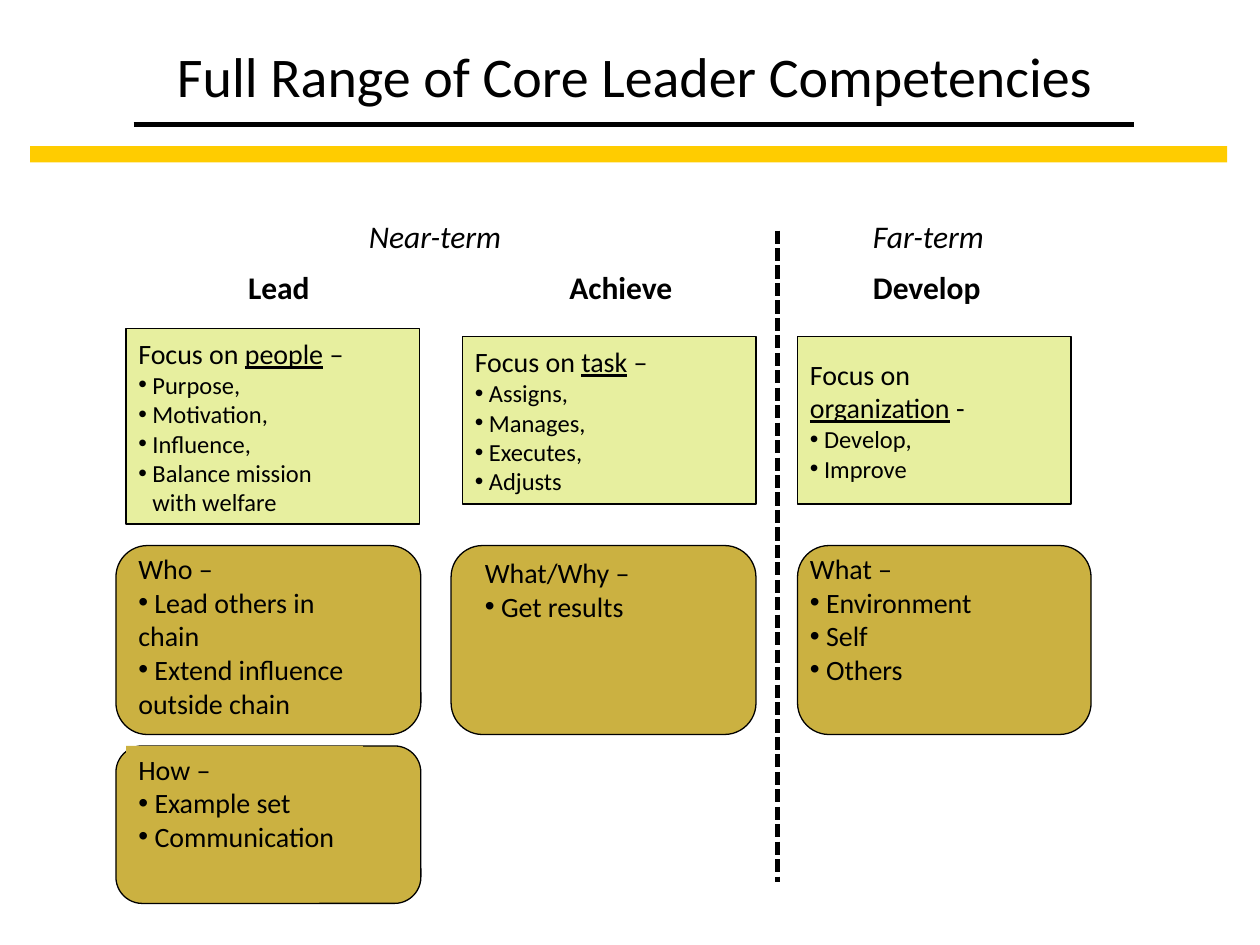
from dataclasses import dataclass

from lxml.etree import SubElement
from pptx import Presentation
from pptx.dml.color import RGBColor
from pptx.enum.dml import MSO_LINE
from pptx.enum.shapes import MSO_CONNECTOR, MSO_SHAPE
from pptx.enum.text import MSO_ANCHOR, MSO_AUTO_SIZE, PP_ALIGN
from pptx.oxml.ns import qn
from pptx.util import Inches, Pt


@dataclass(frozen=True)
class Theme:
    font: str = "Calibri"
    ink: RGBColor = RGBColor(0x00, 0x00, 0x00)
    band: RGBColor = RGBColor(0xFF, 0xCC, 0x00)
    lime: RGBColor = RGBColor(0xE7, 0xEF, 0x9F)
    gold: RGBColor = RGBColor(0xCB, 0xB1, 0x41)
    title: int = 32
    head: int = 18
    body: int = 16
    small: int = 14


@dataclass(frozen=True)
class Box:
    x: float
    y: float
    w: float
    h: float

    def inner(self, x, y, w, h):
        return Box(self.x + x, self.y + y, w, h)

    def place(self):
        return [Inches(v) for v in (self.x, self.y, self.w, self.h)]


THEME = Theme()


def style(run, size, bold=False, italic=False):
    font = run.font
    font.name, font.size = THEME.font, Pt(size)
    font.bold, font.italic = bold, italic
    font.color.rgb = THEME.ink


def indent(para, left, hang, mark=None):
    props = para._p.get_or_add_pPr()
    props.set("marL", str(Inches(left)))
    props.set("indent", str(Inches(hang)))
    if mark:
        SubElement(props, qn("a:buFont")).set("typeface", "Arial")
        SubElement(props, qn("a:buChar")).set("char", mark)


def write(shape, lines, size, small=None, anchor=MSO_ANCHOR.TOP, **look):
    frame = shape.text_frame
    frame.word_wrap = True
    frame.vertical_anchor = anchor
    for i, line in enumerate(lines):
        para = frame.add_paragraph() if i else frame.paragraphs[0]
        para.alignment = PP_ALIGN.LEFT
        points = small if small and line[0] in "•>" else size
        step = points * 0.008
        if line[0] == "•":
            indent(para, step, -step, "•")
        elif line[0] == ">":
            indent(para, step, 0)
        for k, part in enumerate(line.lstrip("•> ").split("_")):
            if part:
                run = para.add_run()
                run.text = part
                style(run, points, **look)
                run.font.underline = k % 2 == 1


def panel(slide, box, fill, kind=MSO_SHAPE.RECTANGLE, edge=True):
    shape = slide.shapes.add_shape(kind, *box.place())
    shape.shadow.inherit = False
    shape.fill.solid()
    shape.fill.fore_color.rgb = fill
    if edge:
        shape.line.color.rgb = THEME.ink
        shape.line.width = Pt(0.75)
    else:
        shape.line.fill.background()
    return shape


def rule(slide, start, end, width, dash=None):
    line = slide.shapes.add_connector(
        MSO_CONNECTOR.STRAIGHT, *[Inches(v) for v in start + end])
    line.line.color.rgb = THEME.ink
    line.line.width = Pt(width)
    if dash:
        line.line.dash_style = dash
    SubElement(line._element.spPr, qn("a:effectLst"))


def label(slide, box, text, **look):
    write(slide.shapes.add_textbox(*box.place()), [text], THEME.head, **look)


def header(slide, box, text):
    title = slide.shapes.title
    spot = box.inner(0.09, 0, 9.42, 0.64)
    title.left, title.top, title.width, title.height = spot.place()
    frame = title.text_frame
    frame.text = text
    frame.auto_size = MSO_AUTO_SIZE.NONE
    frame.vertical_anchor = MSO_ANCHOR.TOP
    frame.paragraphs[0].alignment = PP_ALIGN.CENTER
    style(frame.paragraphs[0].runs[0], THEME.title)
    panel(slide, box.inner(0, 0.88, box.w, 0.13), THEME.band, edge=False)
    y = box.y + 0.71
    rule(slide, (box.x + 0.82, y), (box.x + 8.76, y), 3)


def card(slide, box, spot, lines, cover):
    shape = panel(slide, box, THEME.gold, MSO_SHAPE.ROUNDED_RECTANGLE)
    shape.adjustments[0] = 0.167
    area = box.inner(*spot)
    if cover:
        text = panel(slide, area, THEME.gold, edge=False)
    else:
        text = slide.shapes.add_textbox(*area.place())
    write(text, lines, THEME.body)


def column(slide, box, name, head, focus, points, cards):
    x, w = head
    label(slide, box.inner(x, 0, w, 0.4), name, bold=True)
    shape = panel(slide, box.inner(*focus), THEME.lime)
    write(shape, points, THEME.body, THEME.small, MSO_ANCHOR.MIDDLE)
    for y, h, spot, lines, cover in cards:
        card(slide, box.inner(0, y, box.w, h), spot, lines, cover)


def main():
    deck = Presentation()
    deck.slide_width, deck.slide_height = Inches(10), Inches(7.5)
    slide = deck.slides.add_slide(deck.slide_layouts[5])
    header(slide, Box(0.24, 0.28, 9.5, 1.01),
           "Full Range of Core Leader Competencies")
    label(slide, Box(2.83, 1.67, 1.33, 0.4), "Near-term", italic=True)
    label(slide, Box(6.83, 1.67, 1.16, 0.4), "Far-term", italic=True)
    column(
        slide, Box(0.92, 2.08, 2.42, 5.09), "Lead", (0.95, 0.78),
        (0.08, 0.53, 2.33, 1.55),
        ["Focus on _people_ –", "• Purpose,", "• Motivation,",
         "• Influence,", "• Balance mission", "> with welfare"],
        [(2.25, 1.5, (0.08, 0, 2.33, 1.44),
          ["Who –", "• Lead others in", "chain",
           "• Extend influence", "outside chain"], False),
         (3.84, 1.25, (0.08, 0, 1.88, 0.9),
          ["How –", "• Example set", "• Communication"], True)])
    column(
        slide, Box(3.58, 2.08, 2.42, 3.75), "Achieve", (0.84, 1.16),
        (0.09, 0.59, 2.33, 1.33),
        ["Focus on _task_ –", "• Assigns,", "• Manages,",
         "• Executes,", "• Adjusts"],
        [(2.25, 1.5, (0.17, 0.03, 1.42, 0.64),
          ["What/Why –", "• Get results"], True)])
    column(
        slide, Box(6.33, 2.08, 2.33, 3.75), "Develop", (0.5, 1.17),
        (0, 0.59, 2.17, 1.33),
        ["Focus on", "_organization_ -", "• Develop,", "• Improve"],
        [(2.25, 1.5, (0, 0, 1.59, 1.17),
          ["What –", "• Environment", "• Self", "• Others"], False)])
    rule(slide, (6.17, 1.83), (6.17, 7), 2.5, MSO_LINE.SQUARE_DOT)
    deck.save("out.pptx")


if __name__ == "__main__":
    main()
